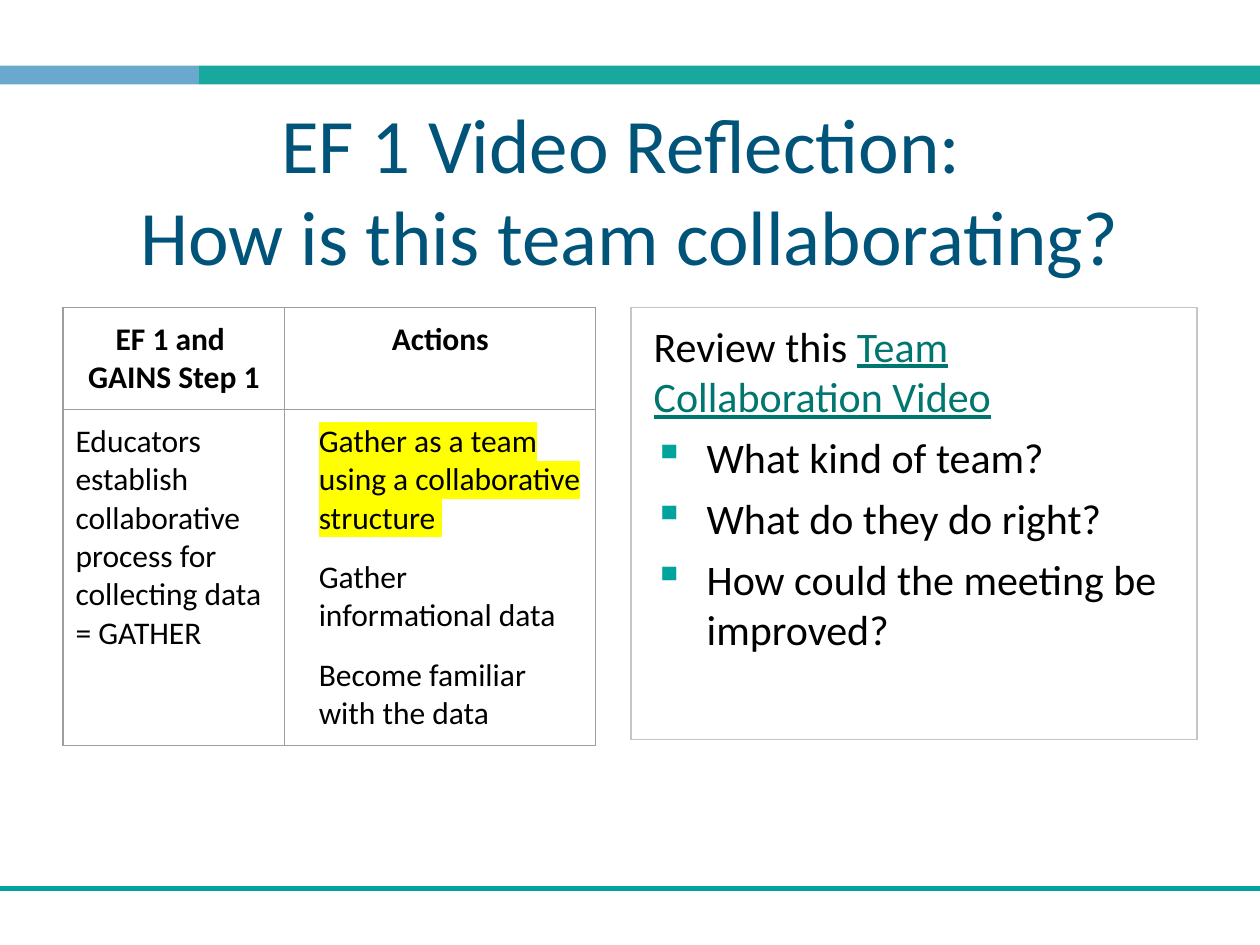
"""Build the video reflection slide with its table and question box."""
from dataclasses import dataclass

from lxml import etree as et
from pptx import Presentation
from pptx.dml.color import RGBColor
from pptx.enum import shapes as sh, text as tx
from pptx.oxml import ns
from pptx.util import Inches, Pt

BLACK = RGBColor(0, 0, 0)
NAVY = RGBColor(0x00, 0x54, 0x79)
BLUE = RGBColor(0x69, 0xA9, 0xCD)
GREEN = RGBColor(0x19, 0xA8, 0x9E)
TEAL = RGBColor(0x00, 0xA4, 0x9D)
LINK = RGBColor(0x00, 0x76, 0x70)
FRAME = RGBColor(0xC4, 0xC5, 0xC6)
GRID = RGBColor(0x9E, 0x9E, 0x9E)
YELLOW = RGBColor(0xFF, 0xFF, 0x00)
FONT = "Calibri"
PAD = Inches(0.1)
LEFT, CENTER = tx.PP_ALIGN.LEFT, tx.PP_ALIGN.CENTER


@dataclass
class Run:
    text: str
    color: RGBColor = BLACK
    under: bool = False
    mark: RGBColor | None = None


@dataclass
class Para:
    runs: list[Run]
    inset: float = 0
    hang: float = 0
    bullet: str = ""


@dataclass
class Band:
    left: float
    width: float
    color: RGBColor


@dataclass
class Cell:
    paras: list[Para]
    head: bool = False


def plain(text: str, **kw) -> Para:
    return Para([Run(text)], **kw)


def paint(node, color: RGBColor):
    fill = et.SubElement(node, ns.qn("a:solidFill"))
    et.SubElement(fill, ns.qn("a:srgbClr"), val=str(color))


def write(frame, paras: list[Para], size: float, bold: bool = False,
          align=LEFT, after: float = 0, anchor=tx.MSO_ANCHOR.TOP) -> None:
    frame.word_wrap = True
    frame.vertical_anchor = anchor
    frame.margin_left = frame.margin_right = PAD
    frame.margin_top = frame.margin_bottom = PAD
    for i, para in enumerate(paras):
        p = frame.paragraphs[0] if i == 0 else frame.add_paragraph()
        props = p._p.get_or_add_pPr()
        props.set("marL", str(Inches(para.inset)))
        props.set("indent", str(Inches(para.hang)))
        if para.bullet:
            tint = et.SubElement(props, ns.qn("a:buClr"))
            et.SubElement(tint, ns.qn("a:srgbClr"), val=str(TEAL))
            et.SubElement(props, ns.qn("a:buChar"), char=para.bullet)
        else:
            et.SubElement(props, ns.qn("a:buNone"))
        p.alignment = align
        p.space_after = Pt(after)
        for part in para.runs:
            for n, line in enumerate(part.text.split("\n")):
                if n:
                    p.add_line_break()
                run = p.add_run()
                run.text = line
                font = run.font
                font.name, font.size, font.bold = FONT, Pt(size), bold
                font.underline = part.under
                font.color.rgb = part.color
                if part.mark is not None:
                    mark = et.Element(ns.qn("a:highlight"))
                    et.SubElement(mark, ns.qn("a:srgbClr"), val=str(part.mark))
                    run._r.rPr.find(ns.qn("a:solidFill")).addnext(mark)


def add_box(slide, left: float, top: float, width: float, height: float):
    box = slide.shapes.add_shape(sh.MSO_SHAPE.RECTANGLE, Inches(left),
                                 Inches(top), Inches(width), Inches(height))
    box.shadow.inherit = False
    return box


def add_band(slide, band: Band) -> None:
    box = add_box(slide, band.left, 0.52, band.width, 0.15)
    box.fill.solid()
    box.fill.fore_color.rgb = band.color
    box.line.fill.background()


def add_rule(slide, y: float) -> None:
    rule = slide.shapes.add_connector(sh.MSO_CONNECTOR.STRAIGHT, 0, Inches(y),
                                      Inches(10), Inches(y))
    rule.line.color.rgb = TEAL
    rule.line.width = Pt(3)
    et.SubElement(rule._element.spPr, ns.qn("a:effectLst"))


def add_grid(slide, rows: list[list[Cell]], wide: list[float],
             high: list[float]) -> None:
    table = slide.shapes.add_table(len(high), len(wide), Inches(0.5),
                                   Inches(2.44), Inches(sum(wide)),
                                   Inches(sum(high))).table
    table.first_row = table.horz_banding = False
    for col, width in zip(table.columns, wide):
        col.width = Inches(width)
    for r, (row, height) in enumerate(zip(rows, high)):
        table.rows[r].height = Inches(height)
        for c, data in enumerate(row):
            cell = table.cell(r, c)
            write(cell.text_frame, data.paras, 18, bold=data.head,
                  align=CENTER if data.head else LEFT,
                  after=0 if data.head else 12)
            cell.margin_left = cell.margin_right = PAD
            cell.margin_top = cell.margin_bottom = PAD
            cell.vertical_anchor = tx.MSO_ANCHOR.TOP
            cell.fill.background()
            props = cell._tc.get_or_add_tcPr()
            for n, side in enumerate("LRTB"):
                edge = et.Element(ns.qn(f"a:ln{side}"), w=str(Pt(0.75)))
                paint(edge, GRID)
                props.insert(n, edge)


def main() -> None:
    deck = Presentation()
    deck.slide_width, deck.slide_height = Inches(10), Inches(7.5)
    slide = deck.slides.add_slide(deck.slide_layouts[6])
    for band in (Band(0, 1.58, BLUE), Band(1.58, 8.42, GREEN)):
        add_band(slide, band)
    add_rule(slide, 7.05)

    title = slide.shapes.add_textbox(Inches(0.5), Inches(0.9), Inches(9),
                                     Inches(1.2))
    head = "EF 1 Video Reflection: \nHow is this team collaborating?"
    write(title.text_frame, [Para([Run(head, NAVY)])], 44, align=CENTER,
          anchor=tx.MSO_ANCHOR.MIDDLE)

    box = add_box(slide, 5.01, 2.44, 4.49, 3.43)
    box.fill.background()
    box.line.color.rgb = FRAME
    box.line.width = Pt(1)
    asks = ["What kind of team?", "What do they do right?",
            "How could the meeting be improved?"]
    intro = Para([Run("Review this "),
                  Run("Team Collaboration Video", LINK, True)], inset=0.08)
    write(box.text_frame, [intro] + [
        plain(ask, inset=0.5, hang=-0.42, bullet="▪") for ask in asks],
        24, after=6)

    first = Run("Gather as a team using a collaborative structure ",
                mark=YELLOW)
    acts = [Para([first], inset=0.17)] + [
        plain(act, inset=0.17) for act in
        ("Gather informational data", "Become familiar with the data")]
    goal = ("Educators establish collaborative process for collecting data "
            "= GATHER")
    rows = [[Cell([plain("EF 1 and "), plain("GAINS Step 1")], True),
             Cell([plain("Actions")], True)],
            [Cell([plain(goal)]), Cell(acts)]]
    add_grid(slide, rows, [1.76, 2.47], [0.81, 2.67])
    deck.save("out.pptx")


if __name__ == "__main__":
    main()
